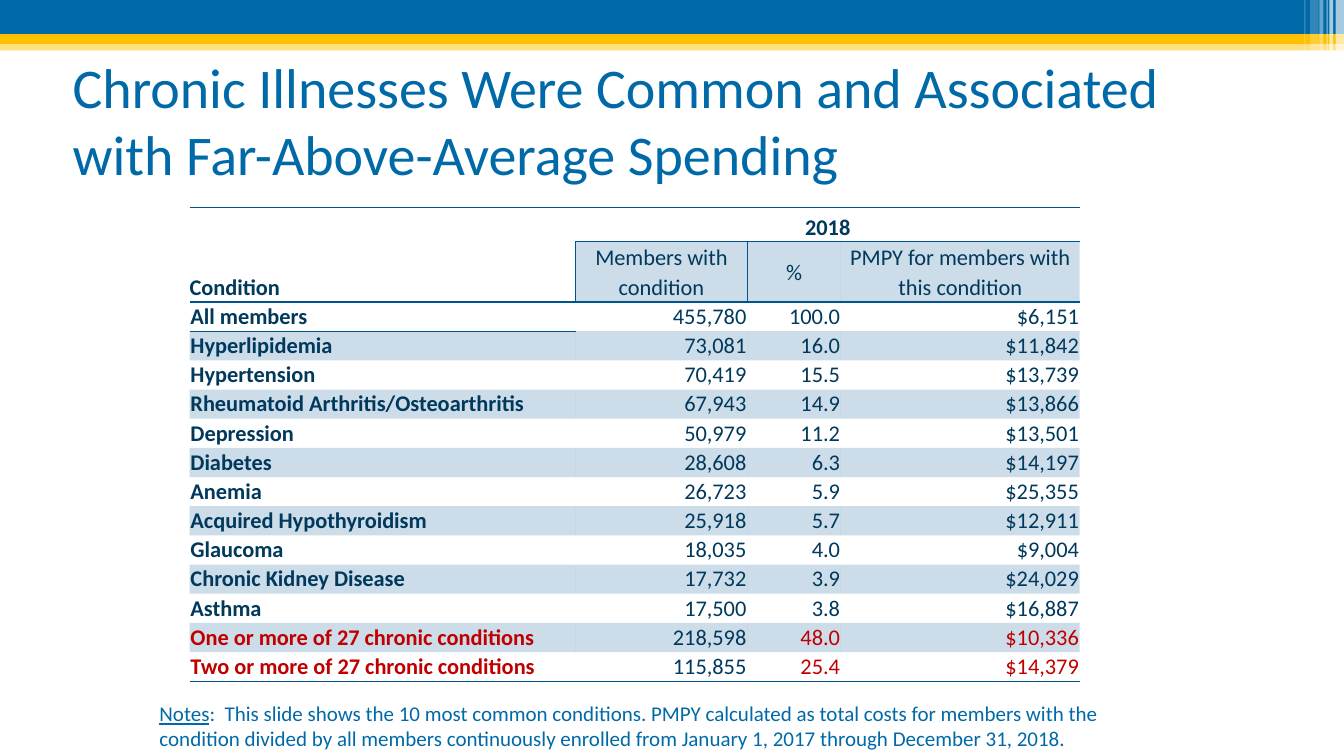
from lxml.etree import SubElement
from pptx import Presentation
from pptx.dml.color import RGBColor
from pptx.enum.shapes import MSO_SHAPE
from pptx.enum.text import MSO_ANCHOR as ANCHOR, PP_ALIGN as ALIGN
from pptx.oxml.ns import qn
from pptx.util import Cm, Pt

TITLE = "Chronic Illnesses Were Common and Associated with Far-Above-Average Spending"
YEAR = "2018"
HEADINGS = ("Condition", "Members with condition", "%", "PMPY for members with this condition")
CONDITIONS = [
    ("All members", "455,780", "100.0", "$6,151"),
    ("Hyperlipidemia", "73,081", "16.0", "$11,842"),
    ("Hypertension", "70,419", "15.5", "$13,739"),
    ("Rheumatoid Arthritis/Osteoarthritis", "67,943", "14.9", "$13,866"),
    ("Depression", "50,979", "11.2", "$13,501"),
    ("Diabetes", "28,608", "6.3", "$14,197"),
    ("Anemia", "26,723", "5.9", "$25,355"),
    ("Acquired Hypothyroidism", "25,918", "5.7", "$12,911"),
    ("Glaucoma", "18,035", "4.0", "$9,004"),
    ("Chronic Kidney Disease", "17,732", "3.9", "$24,029"),
    ("Asthma", "17,500", "3.8", "$16,887"),
    ("One or more of 27 chronic conditions", "218,598", "48.0", "$10,336"),
    ("Two or more of 27 chronic conditions", "115,855", "25.4", "$14,379"),
]
TOTALS = 2  # closing rows set in red
NOTES = (
    "Notes",
    ":  This slide shows the 10 most common conditions. PMPY calculated as total costs for "
    "members with the condition divided by all members continuously enrolled from "
    "January 1, 2017 through December 31, 2018.",
)

BLUE = RGBColor(0x00, 0x69, 0xA7)
GOLD = RGBColor(0xFF, 0xC0, 0x00)
WHITE = RGBColor(0xFF, 0xFF, 0xFF)
NAVY = RGBColor(0x00, 0x39, 0x5C)
RULE = RGBColor(0x00, 0x54, 0x8E)
RED = RGBColor(0xC0, 0x00, 0x00)
FONT = "Calibri"

WIDTH, HEIGHT = 33.87, 19.05
# left, top, width, height, colour, opacity in percent
BANDS = [
    (0, 1.02, WIDTH, 0.25, GOLD, 50),
    (0, 0, WIDTH, 0.86, BLUE, 100),
    (0, 0.86, WIDTH, 0.25, GOLD, 100),
]
STRIPES = [
    (left, 0, width, height, WHITE, opacity)
    for left, width, height, opacity in (
        (33.66, 0.21, 1.73, 65),
        (33.5, 0.1, 1.73, 65),
        (33.43, 0.03, 1.73, 60),
        (33.25, 0.1, 1.73, 40),
        (33.02, 0.21, 1.63, 20),
        (32.87, 0.03, 1.63, 30),
    )
]
COLUMN_WIDTHS = (9.73, 4.32, 2.36, 6.02)
ROW_HEIGHTS = [0.86, 1.52] + [0.735] * len(CONDITIONS)


def paint(fill, colour, opacity, owner):
    fill.solid()
    fill.fore_color.rgb = colour
    if opacity < 100:
        solid = owner.find(qn("a:solidFill"))
        SubElement(solid[0], qn("a:alpha"), val=str(opacity * 1000))


def set_font(paragraph, size, colour, bold=False):
    font = paragraph.font
    font.name, font.size, font.bold = FONT, Pt(size), bold
    font.color.rgb = colour


def add_text(slide, left, top, width, height, anchor):
    """Add a wrapping text box and return its first paragraph."""
    frame = slide.shapes.add_textbox(Cm(left), Cm(top), Cm(width), Cm(height)).text_frame
    frame.word_wrap = True
    frame.vertical_anchor = anchor
    frame.margin_left = frame.margin_right = frame.margin_top = frame.margin_bottom = Cm(0.13)
    return frame.paragraphs[0]


def add_borders(cell, sides):
    """Rule the given sides of a cell, named in the order L, T, B."""
    for side in sides:
        line = SubElement(cell._tc.get_or_add_tcPr(), qn(f"a:ln{side}"), w=str(Pt(1)))
        SubElement(SubElement(line, qn("a:solidFill")), qn("a:srgbClr"), val=str(RULE))


def fill_cell(cell, text, align, anchor, colour=NAVY, bold=False, borders="",
              shaded=False, heading=False):
    cell.text = text
    cell.vertical_anchor = anchor
    margin = Cm(0 if heading else 0.02)
    cell.margin_left = cell.margin_right = cell.margin_top = cell.margin_bottom = margin
    paragraph = cell.text_frame.paragraphs[0]
    paragraph.alignment = align
    if heading:
        paragraph.line_spacing = 1.1
    set_font(paragraph, 16, colour, bold)
    add_borders(cell, borders)
    if shaded:
        paint(cell.fill, RULE, 20, cell._tc.tcPr)
    else:
        cell.fill.background()


def add_condition_table(slide):
    table = slide.shapes.add_table(
        len(ROW_HEIGHTS), len(COLUMN_WIDTHS), Cm(4.78), Cm(5.23),
        Cm(sum(COLUMN_WIDTHS)), Cm(sum(ROW_HEIGHTS))).table
    table.first_row = table.horz_banding = False
    no_style = "{2D5ABB26-0587-4C30-8999-92F81FD0307C}"
    table._tbl.tblPr.find(qn("a:tableStyleId")).text = no_style
    for column, width in zip(table.columns, COLUMN_WIDTHS):
        column.width = Cm(width)
    for row, height in zip(table.rows, ROW_HEIGHTS):
        row.height = Cm(height)

    table.cell(0, 0).merge(table.cell(1, 0))
    table.cell(0, 1).merge(table.cell(0, 3))
    fill_cell(table.cell(0, 0), HEADINGS[0], ALIGN.LEFT, ANCHOR.BOTTOM,
              bold=True, borders="TB", heading=True)
    fill_cell(table.cell(0, 1), YEAR, ALIGN.CENTER, ANCHOR.BOTTOM,
              bold=True, borders="TB", heading=True)
    add_borders(table.cell(1, 0), "B")
    for col in (2, 3):
        add_borders(table.cell(0, col), "TB")
    for col, heading in enumerate(HEADINGS[1:], 1):
        fill_cell(table.cell(1, col), heading, ALIGN.CENTER, ANCHOR.MIDDLE,
                  borders="LT" if col == 1 else "T", shaded=True, heading=True)

    last = len(CONDITIONS) - 1
    for index, condition in enumerate(CONDITIONS):
        for col, value in enumerate(condition):
            is_name, is_members = col == 0, col == 1
            is_red = index > last - TOTALS and not is_members
            borders = "T" if index == 0 and is_name else "B" if index == last else ""
            fill_cell(table.cell(index + 2, col), value,
                      ALIGN.LEFT if is_name else ALIGN.RIGHT, ANCHOR.BOTTOM,
                      RED if is_red else NAVY, bold=is_name, borders=borders,
                      shaded=index % 2 == 1)


def main():
    prs = Presentation()
    prs.slide_width, prs.slide_height = Cm(WIDTH), Cm(HEIGHT)
    slide = prs.slides.add_slide(prs.slide_layouts[6])

    for left, top, width, height, colour, opacity in BANDS + STRIPES:
        bar = slide.shapes.add_shape(
            MSO_SHAPE.RECTANGLE, Cm(left), Cm(top), Cm(width), Cm(height))
        bar.shadow.inherit = False
        bar.line.fill.background()
        paint(bar.fill, colour, opacity, bar._element.spPr)

    title = add_text(slide, 1.7, 1.52, 30.48, 2.97, ANCHOR.MIDDLE)
    title.text = TITLE
    set_font(title, 40, BLUE)

    add_condition_table(slide)

    notes = add_text(slide, 3.89, 17.53, 25.25, 1.55, ANCHOR.TOP)
    for text in NOTES:
        notes.add_run().text = text
    notes.runs[0].font.underline = True
    set_font(notes, 15, BLUE)

    prs.save("out.pptx")


if __name__ == "__main__":
    main()
